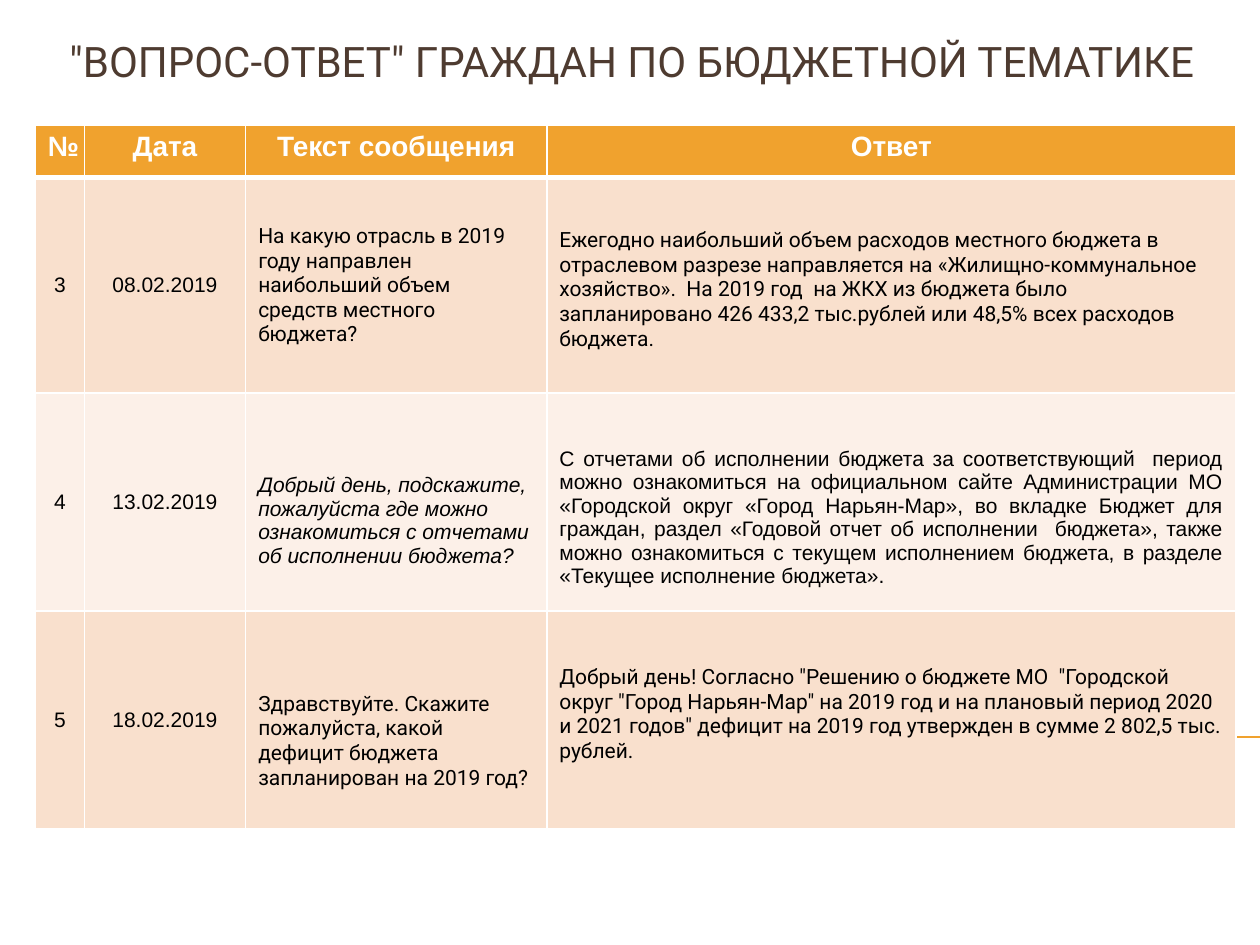
from lxml import etree
from pptx import Presentation, util as u
from pptx.dml.color import RGBColor
from pptx.enum import shapes, text
from pptx.oxml import ns

ALIGN = text.PP_ALIGN
ANCHOR = text.MSO_ANCHOR
ORANGE, WHITE, BLACK, BROWN = "F0A22E", "FFFFFF", "000000", "4E3B30"
BANDS = ["F9E0CD", "FCF0E8"]

HEADERS = ["№", "Дата", "Текст сообщения", "Ответ"]
COLUMN_WIDTHS = [0.39, 1.28, 2.39, 5.47]
ROW_HEIGHTS = [0.42, 1.71, 1.73, 1.73]

CENTERED = dict(align=ALIGN.CENTER, anchor=ANCHOR.MIDDLE)
ROBOTO = dict(name="Roboto")

# Each row: number, date, (question, format), (answer, format)
ROWS = [
    ("3", "08.02.2019",
     ("На какую отрасль в 2019 году направлен наибольший объем средств местного бюджета?",
      dict(ROBOTO, anchor=ANCHOR.MIDDLE)),
     ("Ежегодно наибольший объем расходов местного бюджета в отраслевом разрезе "
      "направляется на «Жилищно-коммунальное хозяйство».  На 2019 год  на ЖКХ из бюджета "
      "было запланировано 426 433,2 тыс.рублей или 48,5% всех расходов бюджета.",
      dict(ROBOTO, top=0.4))),
    ("4", "13.02.2019",
     ("Добрый день, подскажите, пожалуйста где можно ознакомиться с отчетами "
      "об исполнении бюджета?",
      dict(italic=True, top=0.64)),
     ("С отчетами об исполнении бюджета за соответствующий  период можно ознакомиться "
      "на официальном сайте Администрации МО «Городской округ «Город Нарьян-Мар», "
      "во вкладке Бюджет для граждан, раздел «Годовой отчет об исполнении  бюджета», "
      "также можно ознакомиться с текущем исполнением бюджета, в разделе "
      "«Текущее исполнение бюджета».",
      dict(align=ALIGN.JUSTIFY, top=0.43))),
    ("5", "18.02.2019",
     ("Здравствуйте. Скажите пожалуйста, какой дефицит бюджета запланирован на 2019 год?",
      dict(ROBOTO, top=0.64)),
     ("Добрый день! Согласно \"Решению о бюджете МО  \"Городской округ \"Город Нарьян-Мар\" "
      "на 2019 год и на плановый период 2020 и 2021 годов\" дефицит на 2019 год утвержден "
      "в сумме 2 802,5 тыс. рублей.",
      dict(ROBOTO, top=0.43))),
]


def color(value):
    return RGBColor.from_string(value)


class SlideBuilder:
    base_font = dict(name="Arial", size=12, bold=False, italic=False, color=BLACK)

    def __init__(self, slide):
        self.slide = slide

    def add_words(self, para, words, align=ALIGN.LEFT, **values):
        para.alignment = align
        span = para.add_run()
        span.text = words
        for key, value in {**self.base_font, **values}.items():
            if key == "color":
                span.font.color.rgb = color(value)
            else:
                setattr(span.font, key, u.Pt(value) if key == "size" else value)

    def title(self, words, left, top, width, height):
        box = self.slide.shapes.title
        for key, value in dict(left=left, top=top, width=width, height=height).items():
            setattr(box, key, u.Inches(value))
        box.text_frame.word_wrap = True
        box.text_frame.vertical_anchor = ANCHOR.TOP
        self.add_words(box.text_frame.paragraphs[0], words, ALIGN.CENTER,
                       name="Roboto", size=24, color=BROWN)

    def line(self, x1, y1, x2, y2, stroke, width):
        rule = self.slide.shapes.add_connector(
            shapes.MSO_CONNECTOR.STRAIGHT, *map(u.Inches, (x1, y1, x2, y2)))
        rule.line.color.rgb = color(stroke)
        rule.line.width = u.Pt(width)
        etree.SubElement(rule._element.spPr, ns.qn("a:effectLst"))

    def table(self, left, top, widths, heights):
        frame = self.slide.shapes.add_table(
            len(heights), len(widths),
            *map(u.Inches, (left, top, sum(widths), sum(heights))))
        grid = frame.table
        for column, width in zip(grid.columns, widths):
            column.width = u.Inches(width)
        for row, height in zip(grid.rows, heights):
            row.height = u.Inches(height)
        return grid

    def cell(self, cell, words, fill, top=0.05, anchor=ANCHOR.TOP,
             border_top=1, border_bottom=1, **values):
        cell.margin_top = u.Inches(top)
        cell.vertical_anchor = anchor
        # Borders precede the fill in the cell properties
        properties = cell._tc.get_or_add_tcPr()
        for side, width in dict(L=1, R=1, T=border_top, B=border_bottom).items():
            edge = etree.SubElement(properties, ns.qn("a:ln" + side), w=str(int(u.Pt(width))))
            paint = etree.SubElement(edge, ns.qn("a:solidFill"))
            etree.SubElement(paint, ns.qn("a:srgbClr"), val=WHITE)
        cell.fill.solid()
        cell.fill.fore_color.rgb = color(fill)
        self.add_words(cell.text_frame.paragraphs[0], words, **values)


def main():
    deck = Presentation()
    deck.slide_width, deck.slide_height = u.Inches(10), u.Inches(7.5)
    page = SlideBuilder(deck.slides.add_slide(deck.slide_layouts[5]))

    # Title and accent line
    page.title("\"ВОПРОС-ОТВЕТ\" ГРАЖДАН ПО БЮДЖЕТНОЙ ТЕМАТИКЕ", 0.39, 0.23, 9.25, 0.78)
    page.line(0.56, 5.85, 10, 5.85, ORANGE, 0.75)

    # Table header
    grid = page.table(0.28, 0.99, COLUMN_WIDTHS, ROW_HEIGHTS)
    for column, words in enumerate(HEADERS):
        page.cell(grid.cell(0, column), words, ORANGE, border_bottom=3,
                  align=ALIGN.CENTER, size=16, bold=True, color=WHITE)

    # Questions and answers
    for row, (number, date, question, answer) in enumerate(ROWS, start=1):
        entries = [(number, CENTERED), (date, CENTERED), question, answer]
        for column, (words, values) in enumerate(entries):
            page.cell(grid.cell(row, column), words, BANDS[(row - 1) % 2],
                      border_top=3 if row == 1 else 1, **values)

    deck.save("out.pptx")


if __name__ == "__main__":
    main()
